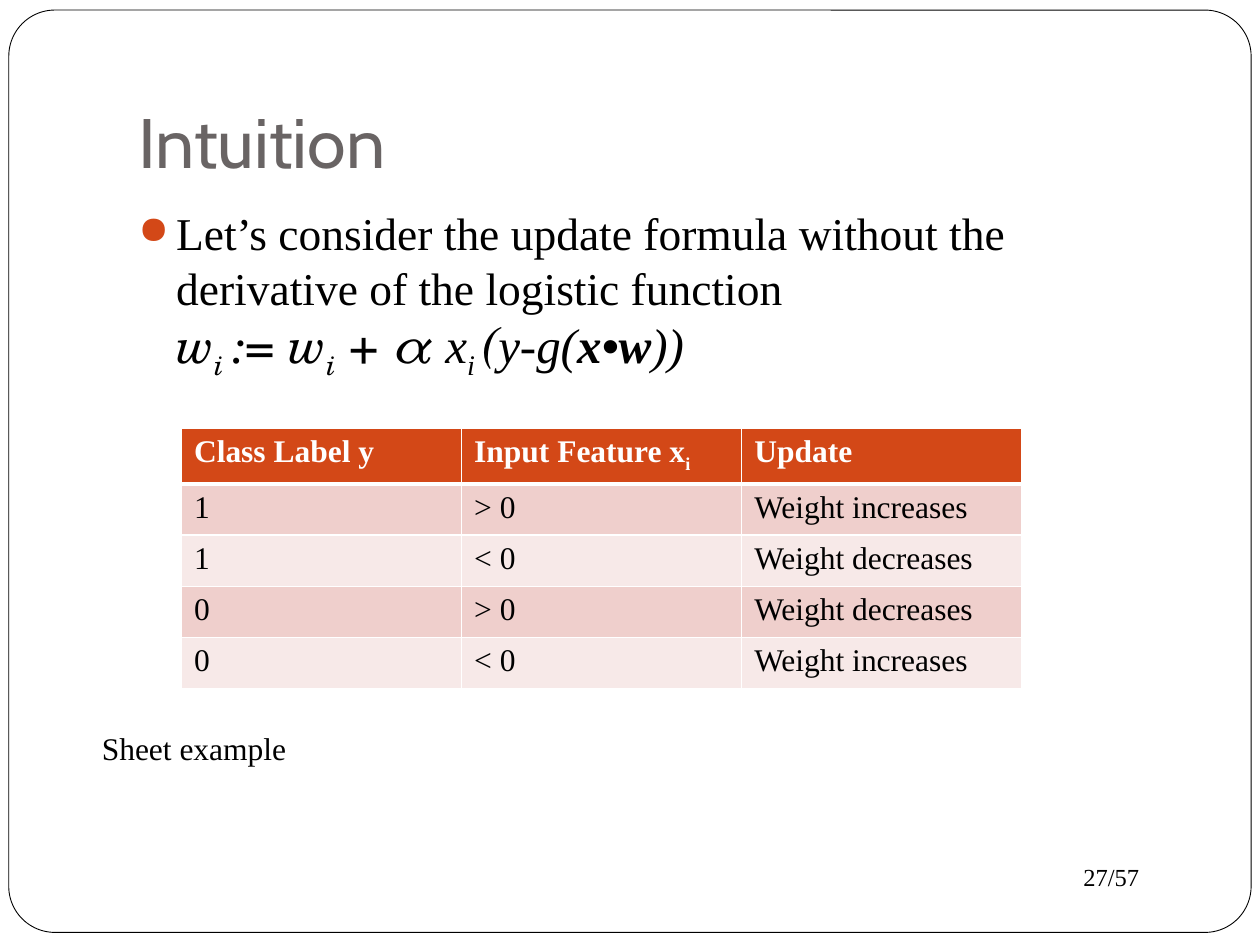
from lxml.etree import SubElement
from pptx import Presentation
from pptx.dml.color import RGBColor
from pptx.enum.shapes import MSO_SHAPE
from pptx.enum.text import MSO_ANCHOR
from pptx.oxml import parse_xml
from pptx.oxml.ns import nsdecls, qn
from pptx.util import Inches, Pt

COLORS = {"black": "000000", "white": "FFFFFF", "title": "696464",
          "accent": "D34817", "odd": "EFCFCC", "even": "F7E9E8"}
SERIF, MATH = "Times New Roman", "TeX Gyre Schola"


def style(run, size, color="black", font=SERIF, bold=False, italic=False, sub=False):
    run.font.size = Pt(size)
    run.font.name = font
    run.font.bold = bold
    run.font.italic = italic
    run.font.color.rgb = RGBColor.from_string(COLORS[color])
    if sub:
        run._r.get_or_add_rPr().set("baseline", "-25000")


def add_text(left, top, width, height, text, size, color="black", font=SERIF):
    box = slide.shapes.add_textbox(Inches(left), Inches(top), Inches(width), Inches(height))
    box.text_frame.word_wrap = True
    box.text_frame.text = text
    for run in box.text_frame.paragraphs[0].runs:
        style(run, size, color, font)
    return box.text_frame


prs = Presentation()
prs.slide_width, prs.slide_height = Inches(10), Inches(7.5)
slide = prs.slides.add_slide(prs.slide_layouts[6])

# Rounded frame
frame = slide.shapes.add_shape(MSO_SHAPE.ROUNDED_RECTANGLE, Inches(0.07), Inches(0.08),
                               Inches(9.86), Inches(7.32))
frame.adjustments[0] = 0.05
frame.shadow.inherit = False
frame.fill.solid()
frame.fill.fore_color.rgb = RGBColor.from_string(COLORS["white"])
frame.line.color.rgb = RGBColor.from_string(COLORS["black"])
frame.line.width = Pt(0.5)

# Page number and title
add_text(8.5, 6.79, 1, 0.34, "27/57", 14)
title = add_text(1, 0.3, 8.5, 1.25, "Intuition", 40, "title", "Cabin")
title.vertical_anchor = MSO_ANCHOR.BOTTOM
title.margin_bottom = Inches(0.1)

# Bulleted statement
body = add_text(1, 1.58, 8.5, 5, "Let’s consider the update formula without the "
                "derivative of the logistic function", 26)
statement = body.paragraphs[0]
statement.space_before = Pt(5.8)
bullet = statement._p.get_or_add_pPr()
bullet.set("marL", str(Inches(0.3)))
bullet.set("indent", str(Inches(-0.3)))
for markup in (f'<a:buClr {nsdecls("a")}><a:srgbClr val="{COLORS["accent"]}"/></a:buClr>',
               f'<a:buSzPct {nsdecls("a")} val="85000"/>',
               f'<a:buChar {nsdecls("a")} char="●"/>'):
    bullet.append(parse_xml(markup))
statement.add_line_break()

# Update formula: text, font, bold, subscript
formula = [("w", MATH, False, False), ("i ", MATH, False, True),
           (":= w", MATH, False, False), ("i", MATH, False, True),
           (" + α ", MATH, False, False), ("x", SERIF, False, False),
           ("i ", SERIF, False, True), ("(", MATH, False, False),
           ("y-g(", SERIF, False, False), ("x", SERIF, True, False),
           ("•", "Arial", False, False), ("w", SERIF, True, False),
           ("))", SERIF, False, False)]
for text, font, bold, sub in formula:
    run = statement.add_run()
    run.text = text
    style(run, 28, font=font, bold=bold, italic=True, sub=sub)

# Table of weight updates
rows = [("Class Label y", "Input Feature x", "Update"),
        ("1", "> 0", "Weight increases"),
        ("1", "< 0", "Weight decreases"),
        ("0", "> 0", "Weight decreases"),
        ("0", "< 0", "Weight increases")]
updates = slide.shapes.add_table(len(rows), 3, Inches(1.44), Inches(3.4),
                                 Inches(6.67), Inches(2.03)).table
for r, row in enumerate(rows):
    header = r == 0
    fill = "accent" if header else "odd" if r % 2 else "even"
    for c, text in enumerate(row):
        cell = updates.cell(r, c)
        cell.text_frame.text = text
        line = cell.text_frame.paragraphs[0]
        if header and c == 1:
            line.add_run().text = "i"
        for n, run in enumerate(line.runs):
            style(run, 18, "white" if header else "black", bold=header, sub=n == 1)
        # Borders come before the fill in the cell properties
        for side in ("lnL", "lnR", "lnT", "lnB"):
            thick = (header and side == "lnB") or (r == 1 and side == "lnT")
            border = SubElement(cell._tc.get_or_add_tcPr(), qn(f"a:{side}"),
                                w=str(Pt(3 if thick else 1)))
            solid = SubElement(border, qn("a:solidFill"))
            SubElement(solid, qn("a:srgbClr"), val=COLORS["white"])
        cell.fill.solid()
        cell.fill.fore_color.rgb = RGBColor.from_string(COLORS[fill])

# Closing note
add_text(0.71, 5.74, 8.03, 0.4, "Sheet example", 18)

prs.save("out.pptx")
